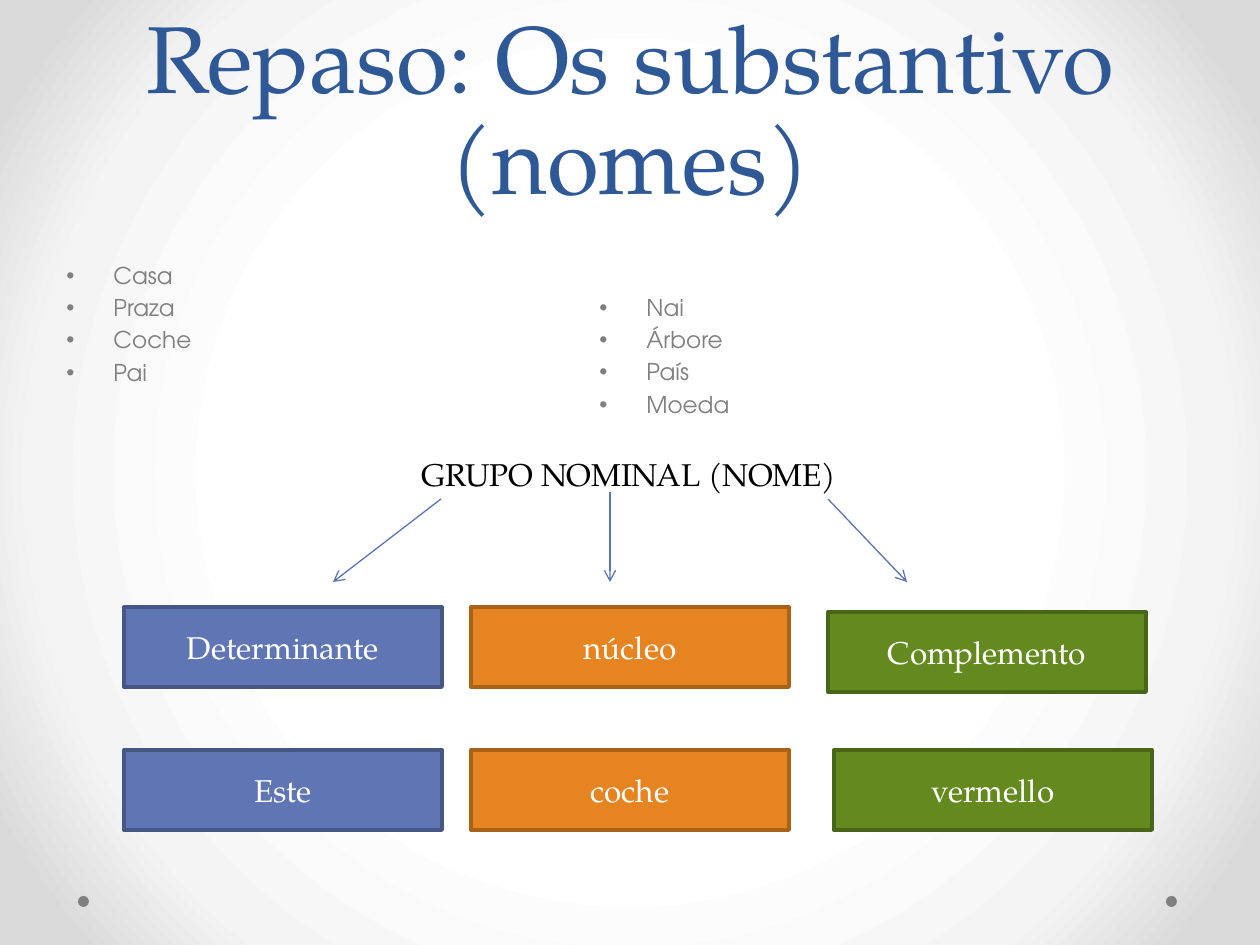
from lxml.etree import SubElement
from pptx import Presentation
from pptx.dml.color import RGBColor
from pptx.enum.shapes import MSO_CONNECTOR, MSO_SHAPE
from pptx.enum.text import MSO_ANCHOR, MSO_AUTO_SIZE, PP_ALIGN
from pptx.oxml.ns import qn
from pptx.util import Emu, Pt

SCALE = 914400 // 126
SERIF = "TeX Gyre Pagella"
SANS = "TeX Gyre Adventor"
BOX_WIDTH, BOX_HEIGHT = 318, 80


def px(value):
    return Emu(value * SCALE)


def place(*lengths):
    return [px(length) for length in lengths]


def colour(code):
    return RGBColor.from_string(code)


def add_span(para, text, size, font, code):
    span = para.add_run()
    span.text = text
    span.font.size = Pt(size)
    span.font.name = font
    span.font.color.rgb = colour(code)


def set_background(page):
    page.background.fill.gradient()
    gradient = page.element.find(".//" + qn("a:gradFill"))
    for child in list(gradient):
        gradient.remove(child)
    stops = SubElement(gradient, qn("a:gsLst"))
    for position, code in ((50, "FFFFFF"), (76, "F4F4F4"), (92, "DADADA")):
        stop = SubElement(stops, qn("a:gs"), pos=str(position * 1000))
        SubElement(stop, qn("a:srgbClr"), val=code)
    circle = SubElement(gradient, qn("a:path"), path="circle")
    SubElement(circle, qn("a:fillToRect"), {side: "50000" for side in "ltrb"})


def add_dot(page, left):
    dot = page.shapes.add_shape(MSO_SHAPE.OVAL, *place(left, 896, 11, 11))
    dot.shadow.inherit = False
    dot.fill.solid()
    dot.fill.fore_color.rgb = colour("808080")
    dot.line.fill.background()


def set_title(page, text):
    title = page.shapes.title
    title.left, title.top, title.width, title.height = place(63, 0, 1134, 220)
    frame = title.text_frame
    frame.auto_size = MSO_AUTO_SIZE.NONE
    frame.word_wrap = True
    frame.vertical_anchor = MSO_ANCHOR.BOTTOM
    para = frame.paragraphs[0]
    para.alignment = PP_ALIGN.CENTER
    para.line_spacing = Pt(58)
    add_span(para, text, 54, SERIF, "2F5897")


def add_bullets(page, left, top, words):
    box = page.shapes.add_textbox(*place(left, top, 533, 160))
    frame = box.text_frame
    frame.word_wrap = True
    for index, word in enumerate(words):
        para = frame.add_paragraph() if index else frame.paragraphs[0]
        para.space_before = Pt(2.64 if index else 0)
        properties = para._p.get_or_add_pPr()
        properties.set("marL", str(px(47)))
        properties.set("indent", str(-px(47)))
        SubElement(properties, qn("a:buFont"), typeface="Arial")
        SubElement(properties, qn("a:buChar"), char="•")
        add_span(para, word, 13.2, SANS, "808080")


def add_heading(page, text):
    box = page.shapes.add_textbox(*place(409, 449, 440, 50))
    frame = box.text_frame
    frame.word_wrap = False
    frame.auto_size = MSO_AUTO_SIZE.SHAPE_TO_FIT_TEXT
    para = frame.paragraphs[0]
    para.alignment = PP_ALIGN.CENTER
    add_span(para, text, 18, SERIF, "000000")


def add_box(page, left, top, text, fill, edge):
    box = page.shapes.add_shape(
        MSO_SHAPE.RECTANGLE, *place(left, top, BOX_WIDTH, BOX_HEIGHT))
    box.shadow.inherit = False
    box.fill.solid()
    box.fill.fore_color.rgb = colour(fill)
    box.line.color.rgb = colour(edge)
    box.line.width = Pt(2.25)
    frame = box.text_frame
    frame.word_wrap = True
    frame.vertical_anchor = MSO_ANCHOR.MIDDLE
    para = frame.paragraphs[0]
    para.alignment = PP_ALIGN.CENTER
    add_span(para, text, 18, SERIF, "FFFFFF")


def add_arrow(page, *ends):
    arrow = page.shapes.add_connector(MSO_CONNECTOR.STRAIGHT, *place(*ends))
    arrow.line.color.rgb = colour("5C72B2")
    arrow.line.width = Pt(0.75)
    SubElement(arrow.line._get_or_add_ln(), qn("a:tailEnd"), type="arrow")
    SubElement(arrow._element.spPr, qn("a:effectLst"))


def main():
    deck = Presentation()
    deck.slide_width, deck.slide_height = place(1260, 945)
    page = deck.slides.add_slide(deck.slide_layouts[5])
    set_background(page)
    for left in (1166, 78):
        add_dot(page, left)
    set_title(page, "Repaso: Os substantivo (nomes)")
    add_bullets(page, 54, 255, ("Casa", "Praza", "Coche", "Pai"))
    add_bullets(page, 587, 287, ("Nai", "Árbore", "País", "Moeda"))
    add_heading(page, "GRUPO NOMINAL (NOME)")
    for start_x, start_y, end_x in ((441, 499, 333), (610, 492, 610), (828, 499, 907)):
        add_arrow(page, start_x, start_y, end_x, 582)
    blue, orange, green = ("6076B4", "475785"), ("E68422", "AA6219"), ("63891F", "496517")
    for left, top, text, colours in (
        (124, 607, "Determinante", blue),
        (471, 607, "núcleo", orange),
        (828, 612, "Complemento", green),
        (124, 750, "Este", blue),
        (471, 750, "coche", orange),
        (834, 750, "vermello", green),
    ):
        add_box(page, left, top, text, *colours)
    deck.save("out.pptx")


if __name__ == "__main__":
    main()
